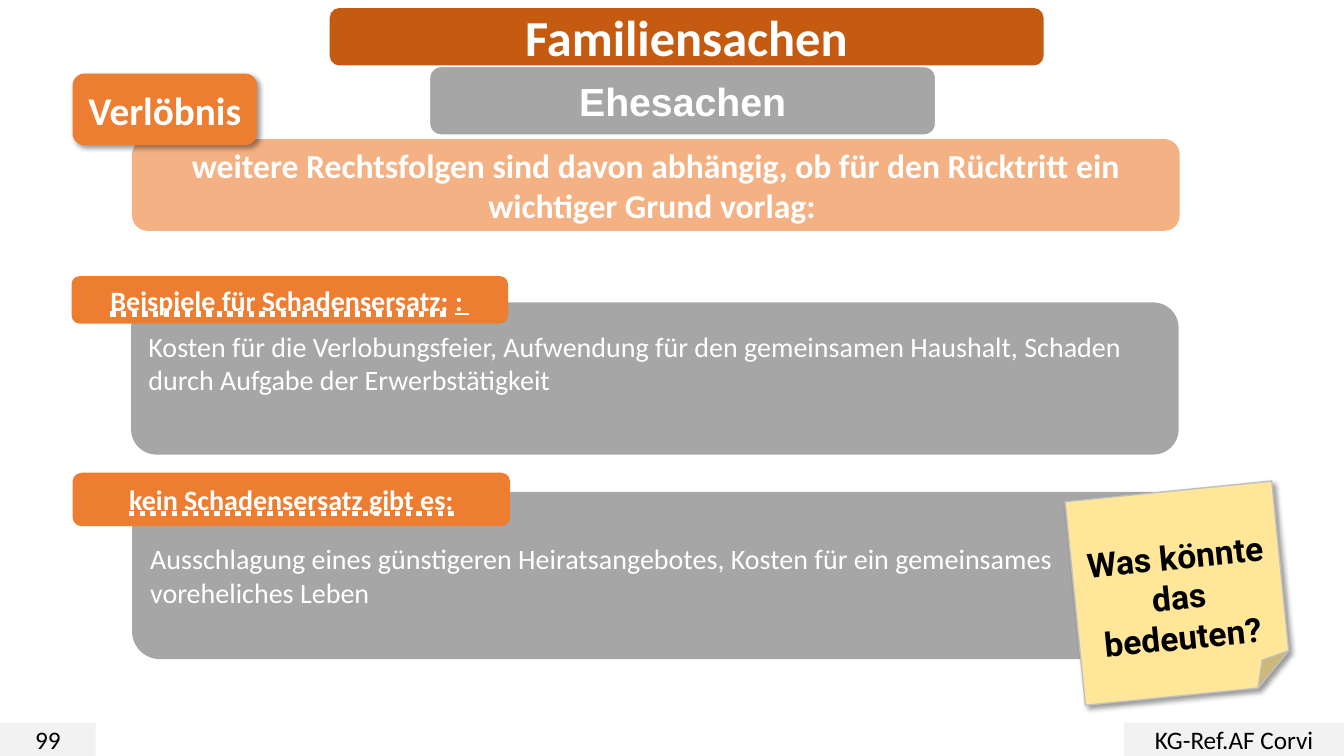
from lxml import etree
from pptx import Presentation
from pptx import util as u
from pptx.dml.color import RGBColor
from pptx.enum import shapes, text
from pptx.oxml import ns

COLOURS = {
    "title": "C55A11", "orange": "ED7D31", "peach": "F4B183", "grey": "A6A6A6",
    "footer": "F2F2F2", "note": "FFE699", "note_line": "BFBFBF",
    "white": "FFFFFF", "black": "000000",
}
KINDS = shapes.MSO_SHAPE
DOTTED = text.MSO_UNDERLINE.DOTTED_HEAVY_LINE
SINGLE = text.MSO_UNDERLINE.SINGLE_LINE


def colour(name):
    """Return the named colour."""
    return RGBColor.from_string(COLOURS[name])


def add_shadow(shape):
    """Give the shape a soft shadow to the lower right."""
    effects = shape._element.spPr.find(ns.qn("a:effectLst"))
    shadow = etree.SubElement(effects, ns.qn("a:outerShdw"), blurRad=str(u.Pt(4)),
                              dist=str(u.Pt(3)), dir="2700000", algn="tl", rotWithShape="0")
    black = etree.SubElement(shadow, ns.qn("a:srgbClr"), val=COLOURS["black"])
    etree.SubElement(black, ns.qn("a:alpha"), val="40000")


def format_run(run, size, ink="white", bold=True, font="Calibri", underline=None):
    """Set the character format of a run."""
    run.font.size = u.Pt(size)
    run.font.name = font
    run.font.bold = bold
    run.font.underline = underline
    run.font.color.rgb = colour(ink)


def add_box(slide, box, fill, words, size, kind=KINDS.ROUNDED_RECTANGLE, line=None,
            align=text.PP_ALIGN.CENTER, **run_format):
    """Add a filled shape with vertically centred text."""
    shape = slide.shapes.add_shape(kind, *map(u.Inches, box))
    shape.shadow.inherit = False
    shape.fill.solid()
    shape.fill.fore_color.rgb = colour(fill)
    if line:
        shape.line.color.rgb = colour(line)
        shape.line.width = u.Pt(1)
    else:
        shape.line.fill.background()
    frame = shape.text_frame
    frame.word_wrap = True
    frame.vertical_anchor = text.MSO_ANCHOR.MIDDLE
    frame.margin_top = frame.margin_bottom = u.Inches(0.05)
    frame.text = words
    paragraph = frame.paragraphs[0]
    paragraph.alignment = align
    format_run(paragraph.runs[0], size, **run_format)
    return shape


def add_section(slide, body_box, body, label_box, label):
    """Add a grey body with an orange label on its upper edge."""
    body_shape = add_box(slide, body_box, "grey", body, 20,
                         align=text.PP_ALIGN.LEFT, bold=False)
    label_shape = add_box(slide, label_box, "orange", label, 20, underline=DOTTED)
    return body_shape, label_shape


def add_note(slide, words):
    """Add the tilted sticky note."""
    note = add_box(slide, (10.66, 4.87, 2.06, 2.03), "note", words, 24,
                   kind=KINDS.FOLDED_CORNER, line="note_line", ink="black", font="Roboto")
    note.rotation = 354.3
    note.text_frame.margin_top = u.Inches(0.45)
    add_shadow(note)


def main():
    """Build and save the slide."""
    presentation = Presentation()
    presentation.slide_width = u.Inches(13.33)
    presentation.slide_height = u.Inches(7.5)
    slide = presentation.slides.add_slide(presentation.slide_layouts[6])

    add_box(slide, (3.27, 0.08, 7.08, 0.57), "title", "Familiensachen", 36)
    for left, width, words in ((0, 0.95, "99"), (11.15, 2.18, "KG-Ref.AF Corvi")):
        add_box(slide, (left, 7.17, width, 0.33), "footer", words, 18,
                kind=KINDS.RECTANGLE, ink="black", bold=False)
    add_box(slide, (4.26, 0.66, 5.02, 0.68), "grey", "Ehesachen", 28,
            line="white", font="Arial")
    add_box(slide, (1.31, 1.38, 10.39, 0.91), "peach",
            "weitere Rechtsfolgen sind davon abhängig, ob für den Rücktritt ein "
            "wichtiger Grund vorlag: ", 24)
    add_shadow(add_box(slide, (0.72, 0.73, 1.83, 0.71), "orange", "Verlöbnis", 28))

    damages, examples = add_section(
        slide, (1.3, 3, 10.39, 1.51),
        "Kosten für die Verlobungsfeier, Aufwendung für den gemeinsamen Haushalt, "
        "Schaden durch Aufgabe der Erwerbstätigkeit",
        (0.71, 2.74, 4.33, 0.47), "Beispiele für Schadensersatz:")
    damages.text_frame.margin_bottom = u.Inches(0.36)
    for words, underline in ((" ", None), (": ", SINGLE)):
        run = examples.text_frame.paragraphs[0].add_run()
        run.text = words
        format_run(run, 20, underline=underline)

    add_section(
        slide, (1.31, 4.88, 10.38, 1.66),
        "Ausschlagung eines günstigeren Heiratsangebotes, Kosten für ein gemeinsames "
        "voreheliches Leben",
        (0.72, 4.69, 4.34, 0.53), "kein Schadensersatz gibt es:")
    add_note(slide, "Was könnte das bedeuten?")
    presentation.save("out.pptx")


if __name__ == "__main__":
    main()
